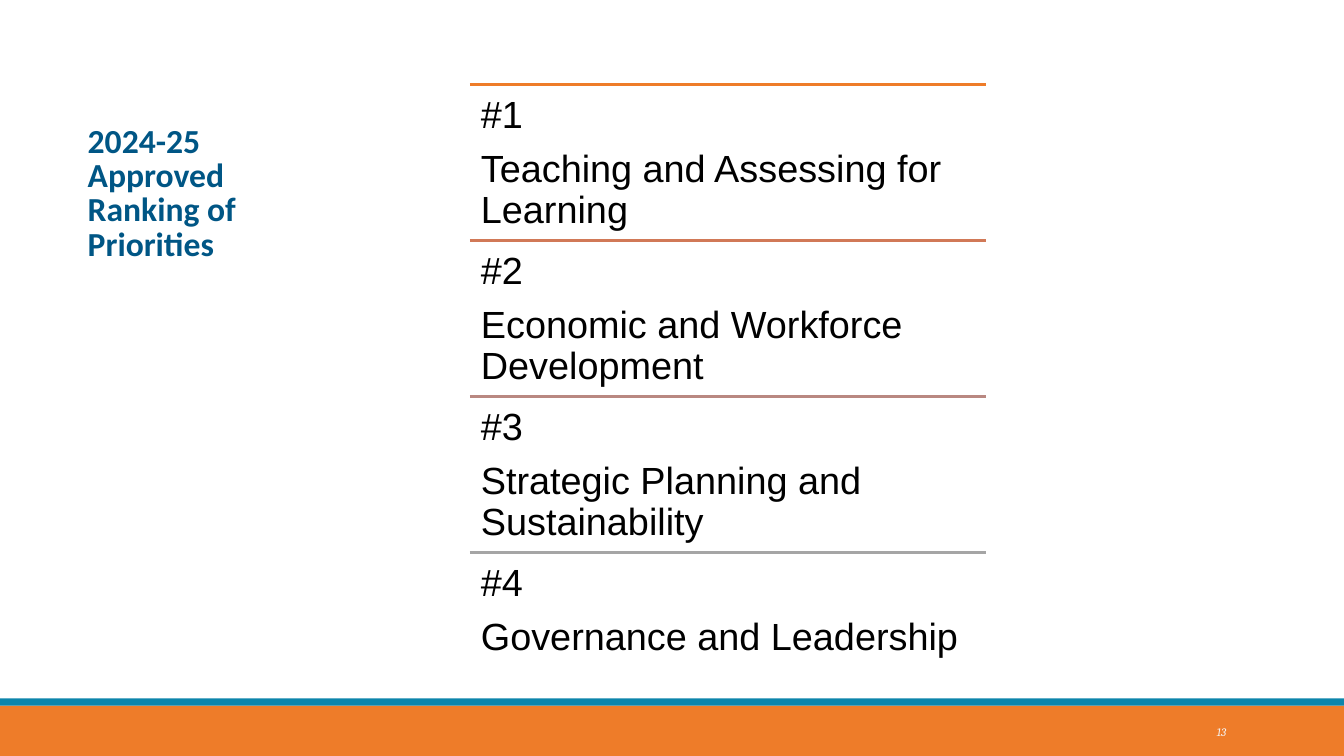
import dataclasses

import pptx
import pptx.dml.color
import pptx.enum.shapes
import pptx.enum.text
import pptx.oxml
import pptx.util
from pptx.util import Inches

RGB = pptx.dml.color.RGBColor.from_string
ALIGN = pptx.enum.text.PP_ALIGN
ANCHOR = pptx.enum.text.MSO_ANCHOR


@dataclasses.dataclass(frozen=True)
class Theme:
    orange: str = "EE7C29"
    blue: str = "0D85AB"
    title_color: str = "005685"
    text_color: str = "000000"
    number_color: str = "F5F5F5"
    title_font: str = "Calibri"
    body_font: str = "Arial"
    number_font: str = "Cambria"
    title_size: float = 24
    body_size: float = 27
    number_size: float = 8.2
    rule_width: float = 2


THEME = Theme()

# Each priority with the colour of the rule above it.
PRIORITIES = [
    ("Teaching and Assessing for Learning", THEME.orange),
    ("Economic and Workforce Development", "D17957"),
    ("Strategic Planning and Sustainability", "B98881"),
    ("Governance and Leadership", "A5A5A5"),
]


def set_font(paragraph, name, size, color, bold=False, italic=False):
    font = paragraph.font
    font.name = name
    font.size = pptx.util.Pt(size)
    font.color.rgb = RGB(color)
    font.bold = bold
    font.italic = italic


def set_frame(frame, anchor, side, end):
    """Wrap the text, anchor it and set its side and top/bottom insets in inches."""
    frame.word_wrap = True
    frame.auto_size = pptx.enum.text.MSO_AUTO_SIZE.NONE
    frame.vertical_anchor = anchor
    frame.margin_left = frame.margin_right = Inches(side)
    frame.margin_top = frame.margin_bottom = Inches(end)


def add_bar(slide, left, top, width, height, color):
    bar = slide.shapes.add_shape(
        pptx.enum.shapes.MSO_SHAPE.RECTANGLE,
        Inches(left), Inches(top), Inches(width), Inches(height))
    bar.shadow.inherit = False
    bar.fill.solid()
    bar.fill.fore_color.rgb = RGB(color)
    bar.line.fill.background()


def add_footer(slide, left, top, width, height, number):
    stripe = 0.07
    add_bar(slide, left, top + stripe, width, height - stripe, THEME.orange)
    add_bar(slide, left, top, width, stripe, THEME.blue)

    number_box = slide.shapes.add_textbox(
        Inches(left + width - 2.5), Inches(top + 0.13), Inches(1.43), Inches(0.4))
    set_frame(number_box.text_frame, ANCHOR.MIDDLE, 0.1, 0.05)
    paragraph = number_box.text_frame.paragraphs[0]
    paragraph.text = number
    paragraph.alignment = ALIGN.RIGHT
    paragraph.space_after = pptx.util.Pt(6)
    set_font(paragraph, THEME.number_font, THEME.number_size,
             THEME.number_color, italic=True)


def place_title(slide, left, top, width, height, text):
    title = slide.shapes.title
    title.left, title.top = Inches(left), Inches(top)
    title.width, title.height = Inches(width), Inches(height)
    set_frame(title.text_frame, ANCHOR.BOTTOM, 0.1, 0.05)
    paragraph = title.text_frame.paragraphs[0]
    paragraph.text = text
    paragraph.alignment = ALIGN.LEFT
    paragraph.line_spacing = 0.85
    set_font(paragraph, THEME.title_font, THEME.title_size,
             THEME.title_color, bold=True)


def add_rule(slide, left, top, width, color):
    rule = slide.shapes.add_connector(
        pptx.enum.shapes.MSO_CONNECTOR.STRAIGHT,
        Inches(left), Inches(top), Inches(left + width), Inches(top))
    rule.line.color.rgb = RGB(color)
    rule.line.width = pptx.util.Pt(THEME.rule_width)
    properties = rule._element.spPr
    properties.append(pptx.oxml.parse_xml(
        '<a:effectLst xmlns:a='
        '"http://schemas.openxmlformats.org/drawingml/2006/main"/>'))


def add_priorities(slide, left, top, width, height, priorities):
    """Stack the ranked priorities in equal rows, each under its own rule."""
    row_height = height / len(priorities)
    for index, (priority, color) in enumerate(priorities):
        row_top = top + index * row_height
        add_rule(slide, left, row_top, width, color)
        box = slide.shapes.add_textbox(
            Inches(left), Inches(row_top), Inches(width), Inches(row_height))
        frame = box.text_frame
        set_frame(frame, ANCHOR.TOP, 0.11, 0.11)
        frame.text = f"#{index + 1}\n{priority}"
        for paragraph in frame.paragraphs:
            paragraph.alignment = ALIGN.LEFT
            paragraph.line_spacing = 0.9
            paragraph.space_after = pptx.util.Pt(0.35 * THEME.body_size)
            set_font(paragraph, THEME.body_font, THEME.body_size, THEME.text_color)


def main():
    presentation = pptx.Presentation()
    presentation.slide_width = Inches(13.33)
    presentation.slide_height = Inches(7.5)
    title_only = presentation.slide_layouts[5]
    slide = presentation.slides.add_slide(title_only)

    add_footer(slide, 0, 6.93, 13.33, 0.57, "13")
    place_title(slide, 0.77, 0.84, 2.93, 1.82,
                "2024-25\vApproved \vRanking of Priorities")
    add_priorities(slide, 4.66, 0.84, 5.12, 6.19, PRIORITIES)
    presentation.save("out.pptx")


if __name__ == "__main__":
    main()
